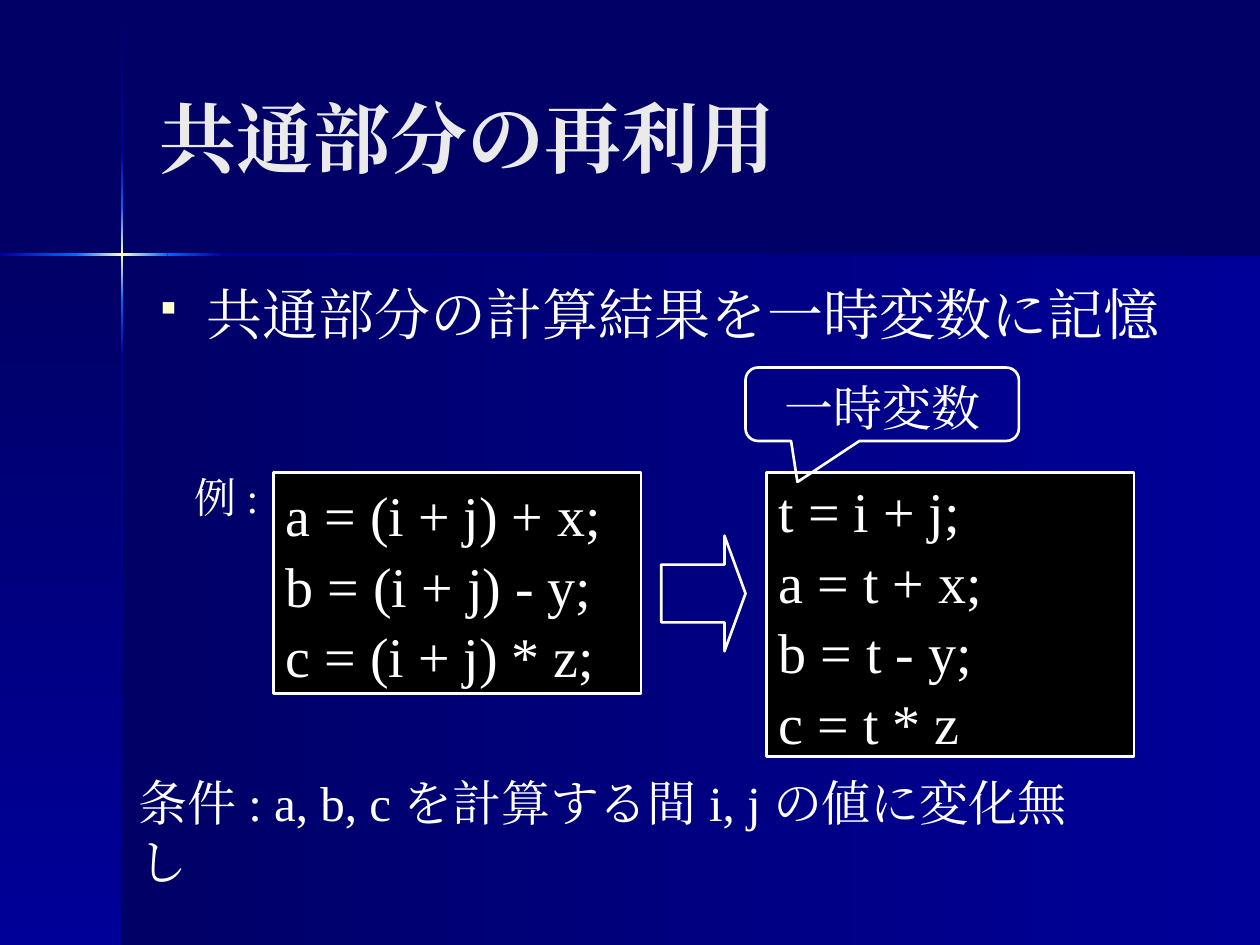
"""Builds the slide on reusing common subexpressions."""
from itertools import pairwise

from lxml.etree import SubElement
from pptx import Presentation
from pptx.dml.color import RGBColor
from pptx.enum.shapes import MSO_SHAPE as Shape
from pptx.enum.text import MSO_ANCHOR as Anchor, MSO_AUTO_SIZE as AutoSize, PP_ALIGN as Align
from pptx.oxml.ns import qn
from pptx.util import Cm, Pt

NAVY = RGBColor(0x00, 0x00, 0x66)
BLUE = RGBColor(0x00, 0x00, 0x99)
BRIGHT = RGBColor(0x00, 0x66, 0xFF)
CREAM = RGBColor(0xFF, 0xFF, 0xCC)
PALE = RGBColor(0xEA, 0xEA, 0xEA)
WHITE = RGBColor(0xFF, 0xFF, 0xFF)
BLACK = RGBColor(0x00, 0x00, 0x00)
FONT = "Times New Roman"
WIDTH, HEIGHT = 25.4, 19.05
CROSS_X, CROSS_Y, BEAM = 2.46, 5.13, 0.05


def format_text(frame, size, color=WHITE, align=Align.LEFT, bold=False):
    for paragraph in frame.paragraphs:
        paragraph.alignment = align
        for run in paragraph.runs:
            run.font.size = Pt(size)
            run.font.bold = bold
            run.font.color.rgb = color
            run.font.name = FONT
            SubElement(run._r.get_or_add_rPr(), qn("a:ea"), typeface=FONT)


def add_gradient(left, top, width, height, colors, angle):
    area = slide.shapes.add_shape(Shape.RECTANGLE, Cm(left), Cm(top), Cm(width), Cm(height))
    area.shadow.inherit = False
    area.line.fill.background()
    area.fill.gradient()
    area.fill.gradient_angle = -angle % 360
    stops = area._element.spPr.find(qn("a:gradFill")).find(qn("a:gsLst"))
    for stop in list(stops):
        stops.remove(stop)
    for i, color in enumerate(colors):
        stop = SubElement(stops, qn("a:gs"), pos=str(100000 * i // (len(colors) - 1)))
        SubElement(stop, qn("a:srgbClr"), val=str(color))


prs = Presentation()
prs.slide_width, prs.slide_height = Cm(WIDTH), Cm(HEIGHT)
slide = prs.slides.add_slide(prs.slide_layouts[5])
slide.background.fill.solid()
slide.background.fill.fore_color.rgb = NAVY

add_gradient(CROSS_X, CROSS_Y, WIDTH - CROSS_X, HEIGHT - CROSS_Y, (NAVY, BLUE), 0)
add_gradient(0, CROSS_Y, CROSS_X, HEIGHT - CROSS_Y, (NAVY, BLUE), 90)

glow = [(BLUE, BRIGHT), (BRIGHT, CREAM, BRIGHT), (BRIGHT, BLUE), (BLUE, NAVY)]
beam_x, beam_y = CROSS_X - BEAM / 2, CROSS_Y - BEAM / 2
for (start, end), colors in zip(pairwise((0, 1.53, 3.38, 4.5, WIDTH)), glow):
    add_gradient(start, beam_y, end - start, BEAM, colors, 0)
for (start, end), colors in zip(pairwise((0.03, 3.07, 4.19, 6.05, 7.16, HEIGHT)),
                                [(NAVY, BLUE)] + glow):
    add_gradient(beam_x, start, BEAM, end - start, colors, 90)

title = slide.shapes.title
title.left, title.top, title.width, title.height = Cm(2.97), Cm(0.64), Cm(19.69), Cm(3.17)
title.text_frame.text = "共通部分の再利用"
title.text_frame.auto_size = AutoSize.NONE
title.text_frame.vertical_anchor = Anchor.BOTTOM
format_text(title.text_frame, 44, PALE, bold=True)

summary = slide.shapes.add_textbox(Cm(2.97), Cm(5.51), Cm(21.39), Cm(1.9)).text_frame
summary.word_wrap = True
summary.text = "共通部分の計算結果を一時変数に記憶"
format_text(summary, 32)
bullet = summary.paragraphs[0]._p.get_or_add_pPr()
bullet.set("marL", str(Cm(0.95)))
bullet.set("indent", str(-Cm(0.95)))
SubElement(SubElement(bullet, qn("a:buClr")), qn("a:srgbClr"), val=str(CREAM))
SubElement(bullet, qn("a:buSzPct"), val="70000")
SubElement(bullet, qn("a:buFont"), typeface="Wingdings")
SubElement(bullet, qn("a:buChar"), char="§")

example = slide.shapes.add_textbox(Cm(3.38), Cm(9.09), Cm(2.29), Cm(1.6)).text_frame
example.word_wrap = False
example.text = " "
example.paragraphs[0].add_run().text = "例 : "
format_text(example, 24, align=Align.CENTER)
example.paragraphs[0].runs[0].font.size = Pt(32)

before = ["a = (i + j) + x;", "b = (i + j) - y;", "c = (i + j) * z;"]
after = ["t = i + j;", "a = t + x;", "b = t - y;", "c = t * z"]
for left, height, lines in ((5.51, 4.45, before), (15.45, 5.72, after)):
    code = slide.shapes.add_shape(Shape.RECTANGLE, Cm(left), Cm(9.53), Cm(7.41), Cm(height))
    code.shadow.inherit = False
    code.fill.solid()
    code.fill.fore_color.rgb = BLACK
    code.line.color.rgb = WHITE
    code.line.width = Pt(1.5)
    code.text_frame.word_wrap = False
    code.text_frame.vertical_anchor = Anchor.MIDDLE
    code.text_frame.text = "\n".join(lines)
    format_text(code.text_frame, 32)
    for paragraph in code.text_frame.paragraphs:
        paragraph.line_spacing = 1.05

condition = slide.shapes.add_textbox(Cm(2.54), Cm(15.45), Cm(19.6), Cm(1.45)).text_frame
condition.word_wrap = True
condition.text = "条件 : a, b, c を計算する間 i, j の値に変化無し"
format_text(condition, 28)

arrow = slide.shapes.add_shape(Shape.RIGHT_ARROW, Cm(13.33), Cm(10.8), Cm(1.7), Cm(2.33))
callout = slide.shapes.add_shape(
    Shape.ROUNDED_RECTANGULAR_CALLOUT, Cm(15.03), Cm(7.41), Cm(5.51), Cm(1.48))
for outline, adjustments in ((arrow, (0.5, 0.25)), (callout, (-0.31, 1.06, 0.17))):
    outline.shadow.inherit = False
    outline.fill.background()
    outline.line.color.rgb = WHITE
    outline.line.width = Pt(1.5)
    for i, value in enumerate(adjustments):
        outline.adjustments[i] = value
callout.text_frame.text = "一時変数"
callout.text_frame.vertical_anchor = Anchor.TOP
format_text(callout.text_frame, 28, align=Align.CENTER)

prs.save("out.pptx")
